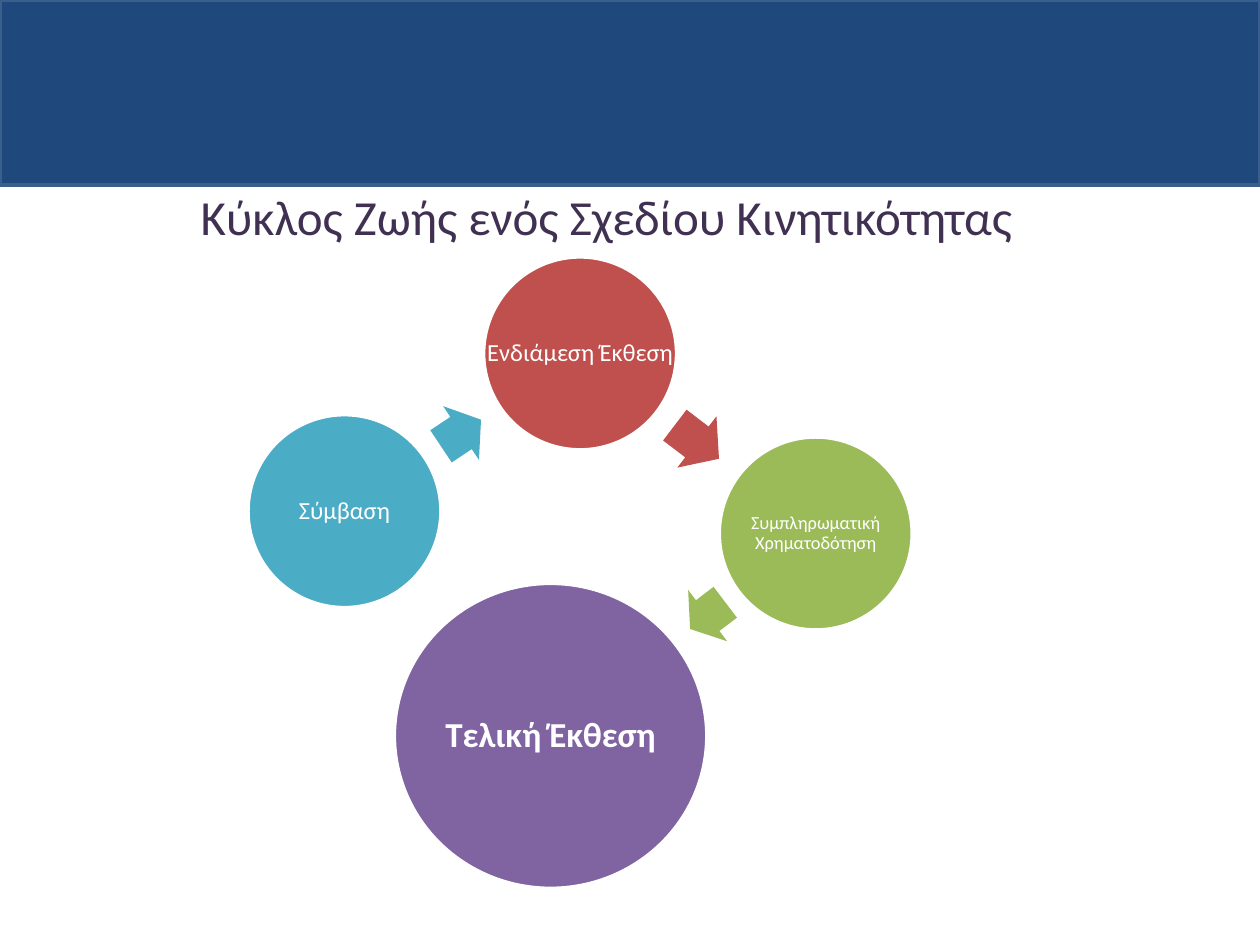
from pptx import Presentation
from pptx.dml.color import RGBColor
from pptx.enum.shapes import MSO_SHAPE
from pptx.enum.text import MSO_ANCHOR, PP_ALIGN
from pptx.util import Cm, Pt

FONT = "Calibri"
NAVY, WHITE, PLUM = "1F497D", "FFFFFF", "403152"
RED, GREEN, PURPLE, TEAL = "C0504D", "9BBB59", "8064A2", "4BACC6"
STAGE = 3.89  # diameter of an ordinary stage circle, cm

# label, left, top, width, height (cm), fill, text format
STAGES = [
    ("Ενδιάμεση Έκθεση", 9.75, 5.18, STAGE, STAGE, RED, {"size": 14}),
    ("Συμπληρωματική Χρηματοδότηση", 14.5, 8.81, STAGE, STAGE, GREEN, {"size": 10.5}),
    ("Τελική Έκθεση", 7.95, 11.76, 6.3, 6.15, PURPLE,
     {"size": 20, "bold": True, "inset": 0.08}),
    ("Σύμβαση", 5, 8.36, STAGE, STAGE, TEAL, {"size": 14}),
]

# left, top, width (cm), rotation, fill
ARROWS = [
    (13.49, 8.26, 1.12, 37.3, RED),
    (13.82, 11.76, 0.89, 142.7, GREEN),
    (8.81, 8.08, 0.97, 326.3, TEAL),
]
ARROW_HEIGHT = 1.3


def color(value):
    return RGBColor.from_string(value)


def add_shape(slide, kind, left, top, width, height, fill, line=None):
    shape = slide.shapes.add_shape(kind, Cm(left), Cm(top), Cm(width), Cm(height))
    shape.shadow.inherit = False
    shape.fill.solid()
    shape.fill.fore_color.rgb = color(fill)
    if line:
        shape.line.color.rgb = color(line)
        shape.line.width = Pt(2)
    else:
        shape.line.fill.background()
    return shape


def add_text(slide, text, left, top, width, height, *, size, fill=WHITE,
             bold=False, inset=0.05, line_spacing=0.9):
    box = slide.shapes.add_textbox(Cm(left), Cm(top), Cm(width), Cm(height))
    frame = box.text_frame
    frame.word_wrap = True
    frame.vertical_anchor = MSO_ANCHOR.MIDDLE
    frame.margin_left = frame.margin_right = Cm(inset)
    frame.margin_top = frame.margin_bottom = Cm(inset)
    paragraph = frame.paragraphs[0]
    paragraph.alignment = PP_ALIGN.CENTER
    paragraph.line_spacing = line_spacing
    run = paragraph.add_run()
    run.text = text
    run.font.name = FONT
    run.font.size = Pt(size)
    run.font.bold = bold
    run.font.color.rgb = color(fill)


def add_stage(slide, label, left, top, width, height, fill, text_format):
    add_shape(slide, MSO_SHAPE.OVAL, left, top, width, height, fill, WHITE)
    # The label spans the whole circle, wider than an oval's own text area
    add_text(slide, label, left, top, width, height, **text_format)


def add_arrow(slide, left, top, width, rotation, fill):
    arrow = add_shape(slide, MSO_SHAPE.RIGHT_ARROW, left, top, width, ARROW_HEIGHT, fill)
    arrow.adjustments[0] = 0.6
    arrow.adjustments[1] = 0.5
    arrow.rotation = rotation


def main():
    presentation = Presentation()
    presentation.slide_width = Cm(25.4)
    presentation.slide_height = Cm(19.05)
    slide = presentation.slides.add_slide(presentation.slide_layouts[6])

    # Header band and title
    add_shape(slide, MSO_SHAPE.RECTANGLE, 0, 0, 25.4, 3.73, NAVY, "3A5F8C")
    add_text(slide, "Κύκλος Ζωής ενός Σχεδίου Κινητικότητας", 0.79, 2.77, 22.86, 3.18,
             size=28, fill=PLUM, inset=0.2, line_spacing=1.0)

    # Life cycle
    for stage in STAGES:
        add_stage(slide, *stage)
    for arrow in ARROWS:
        add_arrow(slide, *arrow)

    presentation.save("out.pptx")


if __name__ == "__main__":
    main()
